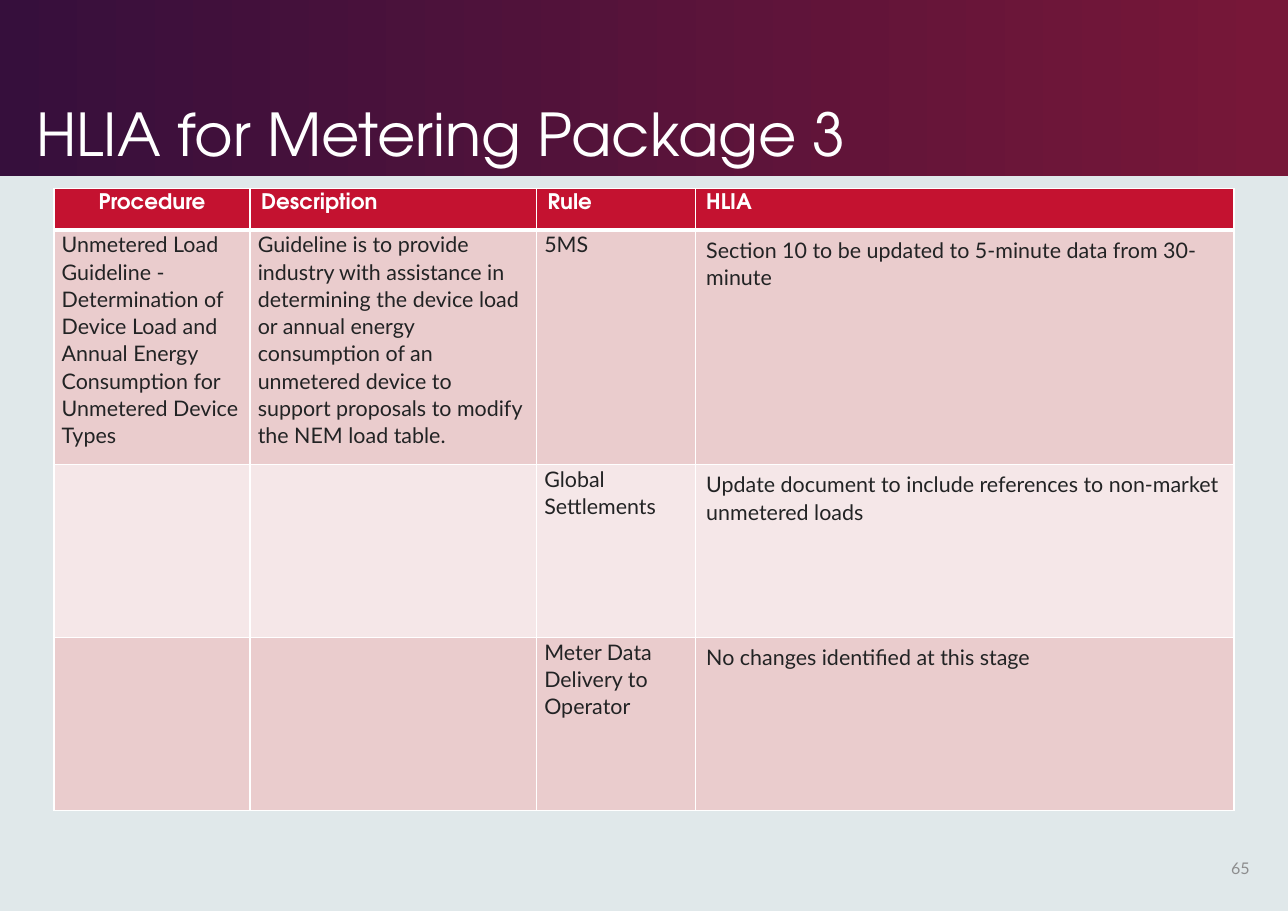
from lxml.etree import SubElement
from pptx import Presentation
from pptx.dml.color import RGBColor
from pptx.enum.shapes import MSO_SHAPE
from pptx.enum.text import MSO_ANCHOR, PP_ALIGN
from pptx.oxml.ns import qn
from pptx.util import Inches, Pt

HEADING_FONT, BODY_FONT = "TeX Gyre Adventor", "Lato"
WHITE, INK, GREY = "FFFFFF", "222324", "8D8D8E"
RED, PINK, PALE_PINK = "C41230", "EACCCD", "F5E7E8"
COLUMN_WIDTHS = [1.78, 2.6, 1.44, 4.89]
ROW_HEIGHTS = [0.38, 2.13, 1.57, 1.57]
ROWS = [
    ["Procedure", "Description", "Rule", "HLIA"],
    ["Unmetered Load Guideline - Determination of Device Load and Annual Energy "
     "Consumption for Unmetered Device Types",
     "Guideline is to provide industry with assistance in determining the device load "
     "or annual energy consumption of an unmetered device to support proposals to "
     "modify the NEM load table.",
     "5MS",
     "Section 10 to be updated to 5-minute data from 30-minute"],
    ["", "", "Global Settlements",
     "Update document to include references to non-market unmetered loads"],
    ["", "", "Meter Data Delivery to Operator", "No changes identified at this stage"],
]


def color(value):
    return RGBColor.from_string(value)


def format_font(font, name, size, value, bold=False):
    font.name, font.size, font.bold = name, Pt(size), bold
    font.color.rgb = color(value)


def add_text(slide, box, text, name, size, value, anchor, align=PP_ALIGN.LEFT):
    shape = slide.shapes.add_textbox(*map(Inches, box))
    frame = shape.text_frame
    frame.word_wrap = True
    frame.vertical_anchor = anchor
    frame.text = text
    paragraph = frame.paragraphs[0]
    paragraph.alignment = align
    format_font(paragraph.runs[0].font, name, size, value)
    return paragraph


def set_borders(cell, top, bottom):
    """Draw white cell borders, with top and bottom widths in points."""
    properties = cell._tc.get_or_add_tcPr()
    sides = [("lnL", 1), ("lnR", 1), ("lnT", top), ("lnB", bottom)]
    for index, (side, width) in enumerate(sides):
        line = SubElement(properties, qn(f"a:{side}"), w=str(Pt(width)))
        fill = SubElement(line, qn("a:solidFill"))
        SubElement(fill, qn("a:srgbClr"), val=WHITE)
        properties.insert(index, line)


def add_banner(slide, box, title):
    left, top, width, height = box
    banner = slide.shapes.add_shape(MSO_SHAPE.RECTANGLE, *map(Inches, box))
    banner.shadow.inherit = False
    banner.line.fill.background()
    banner.fill.gradient()
    banner.fill.gradient_angle = 0
    for stop, position, value in zip(banner.fill.gradient_stops, (0, 0.99), ("360F3C", "771738")):
        stop.position = position
        stop.color.rgb = color(value)
    paragraph = add_text(slide, (left + 0.23, top + 0.16, 8.63, height - 0.17), title,
                         HEADING_FONT, 38.6, WHITE, MSO_ANCHOR.BOTTOM)
    paragraph.line_spacing = 0.9


def fill_cell(cell, text, row, column):
    is_header = row == 0
    is_roomy = is_header or column == len(COLUMN_WIDTHS) - 1
    cell.fill.solid()
    cell.fill.fore_color.rgb = color(RED if is_header else PINK if row % 2 else PALE_PINK)
    cell.margin_left = cell.margin_right = Inches(0.1 if is_roomy else 0.07)
    cell.margin_top = cell.margin_bottom = Inches(0.05 if is_roomy else 0)
    set_borders(cell, top=3 if row == 1 else 1, bottom=3 if is_header else 1)
    if not text:
        return
    cell.text_frame.text = text
    paragraph = cell.text_frame.paragraphs[0]
    font = paragraph.runs[0].font
    if is_header:
        paragraph.alignment = PP_ALIGN.LEFT if column else PP_ALIGN.CENTER
        format_font(font, HEADING_FONT, 14, WHITE, bold=True)
    else:
        paragraph.line_spacing = 1.06
        paragraph.space_after = Pt(6)
        format_font(font, BODY_FONT, 14, INK)


def add_impact_table(slide, left, top):
    box = (left, top, sum(COLUMN_WIDTHS), sum(ROW_HEIGHTS))
    table = slide.shapes.add_table(len(ROWS), len(COLUMN_WIDTHS), *map(Inches, box)).table
    for column, width in zip(table.columns, COLUMN_WIDTHS):
        column.width = Inches(width)
    for row, height in zip(table.rows, ROW_HEIGHTS):
        row.height = Inches(height)
    for row, texts in enumerate(ROWS):
        for column, text in enumerate(texts):
            fill_cell(table.cell(row, column), text, row, column)


def main():
    presentation = Presentation()
    presentation.slide_width, presentation.slide_height = Inches(11.69), Inches(8.27)
    slide = presentation.slides.add_slide(presentation.slide_layouts[6])
    slide.background.fill.solid()
    slide.background.fill.fore_color.rgb = color("E0E8EA")
    add_banner(slide, (0, 0, 11.69, 1.6), "HLIA for Metering Package 3")
    add_impact_table(slide, 0.49, 1.71)
    add_text(slide, (10.89, 7.66, 0.55, 0.44), "65", BODY_FONT, 10.5, GREY,
             MSO_ANCHOR.MIDDLE, PP_ALIGN.RIGHT)
    presentation.save("out.pptx")


if __name__ == "__main__":
    main()
